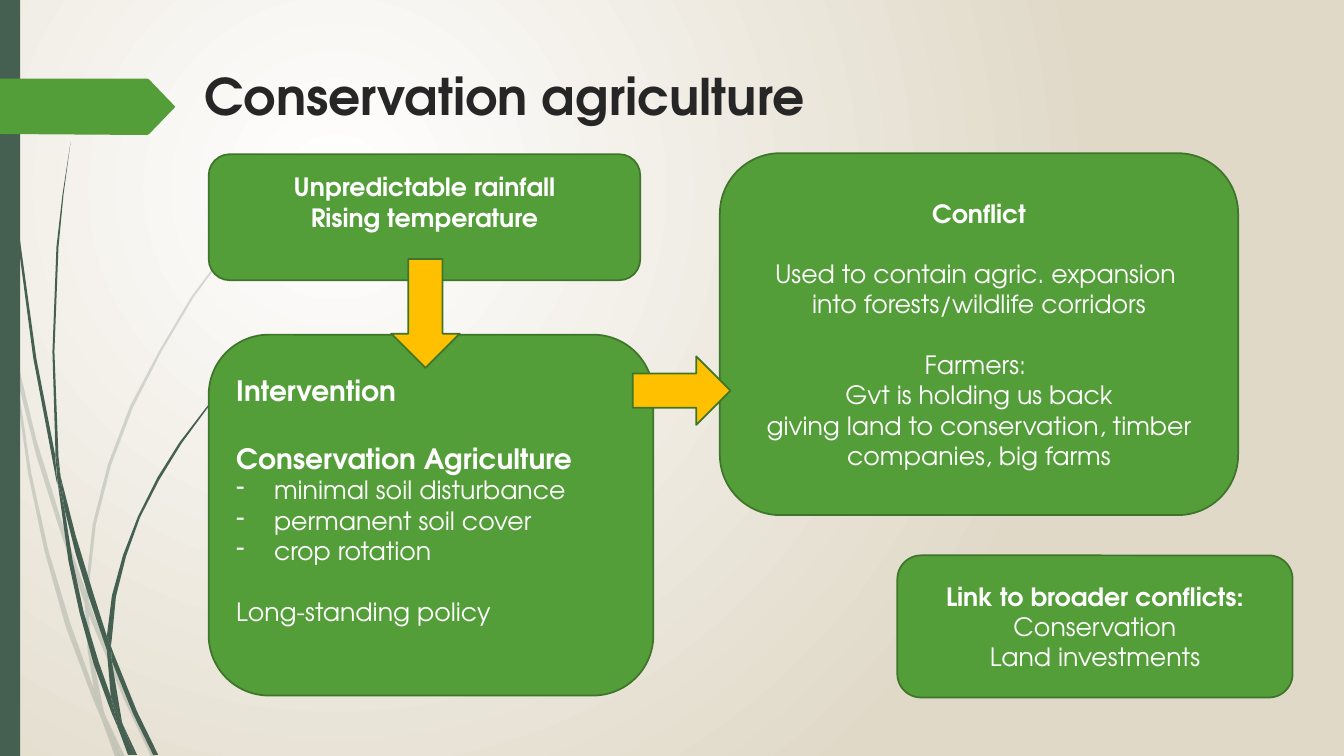
from lxml.etree import SubElement
from pptx import Presentation
from pptx.dml.color import RGBColor
from pptx.enum.shapes import MSO_SHAPE
from pptx.enum.text import MSO_ANCHOR, PP_ALIGN
from pptx.oxml.ns import qn
from pptx.util import Inches, Pt

WIDE, HIGH = Inches(13.33), Inches(7.5)
CELL = HIGH / 75
FONT = "TeX Gyre Adventor"
GREEN = RGBColor(0x54, 0x9E, 0x39)
EDGE = RGBColor(0x3E, 0x75, 0x2A)
PINE = RGBColor(0x45, 0x5F, 0x51)
GOLD = RGBColor(0xFF, 0xC0, 0x00)
WHITE = RGBColor(0xFF, 0xFF, 0xFF)
INK = RGBColor(0x26, 0x26, 0x26)
SAND = RGBColor(0xE0, 0xD9, 0xC8)
GAP = 21.7

PALE = [
    [(1.1, 35), (0.9, 32.2), (0, 28.2), (0, 29.9), (1, 34.4)],
    [(5.8, 52.2), (8.4, 59.9), (8.5, 58.6), (6.2, 52), (3.6, 43.6), (1.4, 34.5), (1.7, 37.6),
     (3.6, 45.2)],
    [(9.2, 60.7), (8.8, 59.6), (8.8, 61), (12.3, 69.4), (15, 75.1), (15.5, 75.1), (12.7, 69.2)],
    [(11.9, 75.1), (12.4, 75.1), (10.5, 71.1)],
    [(9.3, 68.3), (7, 61.9), (4.8, 54.6), (3.1, 46.9), (1.7, 37.6), (1.1, 35), (2.8, 47),
     (4.4, 54.6), (6.5, 62.1), (9.2, 69.3), (10.1, 71.4), (9.9, 70.7)],
    [(8.4, 59.9), (8.7, 64.6), (9.3, 68.3), (9.6, 69.2), (10.5, 71.1), (10.3, 70.6),
     (9.1, 64.6), (8.8, 61), (8.8, 60.8)],
    [(8.8, 58.4), (9.5, 52.1), (11, 46.2), (13.2, 40.4), (16, 34.9), (19.2, 29.5), (22.9, 24.5),
     (26.8, 19.8), (31.2, 15.4), (31.2, 15.3), (26.8, 19.7), (22.8, 24.4), (19, 29.4),
     (15.8, 34.8), (12.9, 40.3), (10.7, 46.1), (9.2, 52), (8.5, 58.4), (8.5, 58.6), (8.8, 59.6)],
    [(10.1, 71.4), (11.4, 75.1), (11.9, 75.1)],
    [(8.8, 60.8), (8.8, 61), (8.8, 59.6), (8.5, 58.6), (8.4, 59.9)],
    [(9.6, 69.2), (9.3, 68.3), (9.9, 70.7), (10.1, 71.4), (11.9, 75.1), (10.5, 71.1)],
]
DARK = [
    [(0.7, 11), (1.7, 23.3), (3.3, 35.5), (5.6, 47.7), (5.7, 48.1), (5.5, 45.7), (5.5, 45.3),
     (3.6, 35.5), (1.9, 23.2), (0.8, 10.9), (0.5, 4.8), (0.4, 0), (0.3, 0), (0.4, 4.8)],
    [(8.8, 59.2), (10.6, 64.5), (10.6, 63.3), (10.6, 63.1), (9.3, 59), (7.5, 53.1), (6, 47.2),
     (6.4, 50.5), (7.5, 54.9)],
    [(11.3, 64.9), (11, 64.1), (11.1, 65.6), (13.2, 70.8), (15.2, 74.9), (15.7, 74.9),
     (13.6, 70.6)],
    [(11, 69.1), (9.8, 65.7), (8.3, 60.7), (7.2, 55.6), (6.4, 50.5), (5.7, 47.7), (6.8, 55.7),
     (7.9, 60.8), (9.3, 65.9), (11.1, 70.8), (11.7, 72.2), (11.6, 71.7)],
    [(6, 47.2), (5.8, 45.3), (5.4, 34.9), (5.8, 24.5), (6.3, 19.3), (7, 14.1), (6.2, 19.3),
     (5.6, 24.5), (5.2, 34.9), (5.5, 44.9)],
    [(13.3, 74.9), (13.6, 74.9), (12.2, 71.9)],
    [(5.7, 47.7), (6.4, 50.5), (6, 47.2), (5.5, 44.9), (5.5, 45.3)],
    [(11.1, 63.3), (11.5, 59.2), (12.5, 55.2), (13.9, 51.3), (15.8, 47.6), (18, 44), (20.5, 40.6),
     (23.1, 37.4), (26.1, 34.4), (26, 34.4), (23.1, 37.3), (20.4, 40.5), (17.8, 43.9),
     (15.6, 47.4), (13.7, 51.2), (12.2, 55.1), (11.1, 59.1), (10.6, 63.1), (11, 64.1)],
    [(11.7, 72.2), (12.7, 74.9), (13.1, 74.9)],
    [(10.6, 64.5), (11, 69.1), (11.6, 70.6), (12.2, 71.9), (12.1, 71.6), (11.1, 65.6),
     (10.9, 65.1)],
    [(10.6, 64.5), (10.9, 65.1), (11.1, 65.6), (11, 64.1), (10.6, 63.1)],
    [(11.6, 70.6), (11, 69.1), (11.6, 71.7), (11.7, 72.2), (13, 74.9), (13.3, 74.9), (12.2, 71.9)],
]
TAG = [(17.4, 10.6), (14.8, 13.3), (14.6, 13.4), (0, 13.3), (0, 7.8), (14.6, 7.8), (14.8, 7.9)]


def paint(shape, fill, line=None):
    """Fill a shape and give it an edge or none."""
    shape.shadow.inherit = False
    shape.fill.solid()
    shape.fill.fore_color.rgb = fill
    if line is None:
        shape.line.fill.background()
    else:
        shape.line.color.rgb = line
        shape.line.width = Pt(1.25)
    return shape


def place(slide, kind, box, fill, line=None):
    """Add a preset shape on the cell grid."""
    sides = [round(side * CELL) for side in box]
    return paint(slide.shapes.add_shape(kind, *sides), fill, line)


def write(frame, text, first=False, size=18, bold=False, color=WHITE,
          align=PP_ALIGN.LEFT, gap=0, dash=False):
    """Write one paragraph with its format."""
    para = frame.paragraphs[0] if first else frame.add_paragraph()
    para.alignment = align
    if gap:
        para.space_before = Pt(gap)
    if dash:
        props = para._p.get_or_add_pPr()
        props.set("marL", str(Pt(27)))
        props.set("indent", str(-Pt(27)))
        SubElement(props, qn("a:buFontTx"))
        SubElement(props, qn("a:buChar")).set("char", "-")
    run = para.add_run()
    run.text = text
    font = run.font
    font.name, font.size, font.bold = FONT, Pt(size), bold
    font.color.rgb = color


def card(slide, box, lines, align=PP_ALIGN.CENTER, foot=0):
    """Draw a green card with its lines, lifted by a foot margin."""
    shape = place(slide, MSO_SHAPE.ROUNDED_RECTANGLE, box, GREEN, EDGE)
    frame = shape.text_frame
    frame.word_wrap = True
    frame.vertical_anchor = MSO_ANCHOR.MIDDLE
    frame.margin_bottom = Inches(0.05) + Pt(foot)
    for rank, (text, form) in enumerate(lines):
        write(frame, text, first=rank == 0, align=align, **form)


def trace(slide, box, knots, fill, alpha=None):
    """Draw a closed outline through knots counted from the box corner."""
    left, top = box[:2]
    rim = [((left + x) * CELL, (top + y) * CELL) for x, y in knots]
    form = slide.shapes.build_freeform(*rim[0], scale=1.0)
    form.add_line_segments(rim[1:], close=True)
    shape = paint(form.convert_to_shape(), fill)
    if alpha:
        tint = shape._element.spPr.find(qn("a:solidFill"))[0]
        SubElement(tint, qn("a:alpha")).set("val", str(alpha * 1000))


def ground(slide):
    """Fill the background with a round gradient."""
    fill = slide.background.fill
    fill.gradient()
    for stop, color, spot in zip(fill.gradient_stops, (WHITE, SAND), (0, 1)):
        stop.color.rgb = color
        stop.position = spot
    grad = slide.background._cSld.find(".//" + qn("a:gradFill"))
    grad.remove(grad.find(qn("a:lin")))
    ring = SubElement(grad, qn("a:path"))
    ring.set("path", "circle")
    rect = SubElement(ring, qn("a:fillToRect"))
    for side, share in zip("ltrb", (50, 50, 100, 100)):
        rect.set(side, str(share * 1000))


def border(slide, box):
    """Draw the grass, the side bar and the tag."""
    for blades, alpha in ((PALE, 20), (DARK, None)):
        for knots in blades:
            trace(slide, box, knots, PINE, alpha)
    place(slide, MSO_SHAPE.RECTANGLE, box, PINE)
    trace(slide, box, TAG, GREEN)


def head(slide, box):
    """Place and write the title."""
    title = slide.shapes.title
    title.left, title.top, title.width, title.height = (round(s * CELL) for s in box)
    title.text_frame.vertical_anchor = MSO_ANCHOR.TOP
    write(title.text_frame, "Conservation agriculture", first=True,
          size=36, bold=True, color=INK)


def flow(slide, box):
    """Draw the cards and the arrows between them."""
    left, top = box[:2]
    bold = {"bold": True}
    large = {"bold": True, "size": 20}
    card(slide, (left, top, 42.8, 12.5), [
        ("Unpredictable rainfall", bold), ("Rising temperature", bold)], foot=GAP)
    card(slide, (left, top + 17.9, 44.1, 35.8), [
        ("Intervention", large),
        ("Conservation Agriculture", {**large, "gap": 24.2}),
        ("minimal soil disturbance", {"dash": True}),
        ("permanent soil cover", {"dash": True}),
        ("crop rotation", {"dash": True}),
        ("Long-standing policy", {"gap": GAP})], align=PP_ALIGN.LEFT, foot=GAP)
    card(slide, (left + 50.7, top - 0.1, 51.4, 35.9), [
        ("Conflict", bold),
        ("Used to contain agric. expansion ", {"gap": GAP}),
        ("into forests/wildlife corridors", {}),
        ("Farmers: ", {"gap": GAP}),
        ("Gvt is holding us back", {}),
        ("giving land to conservation, timber companies, big farms", {})])
    place(slide, MSO_SHAPE.DOWN_ARROW, (left + 18.1, top + 10.4, 6.8, 10.8), GOLD, EDGE)
    side = place(slide, MSO_SHAPE.DOWN_ARROW, (left + 43.5, top + 18.6, 6.8, 9.7), GOLD, EDGE)
    side.rotation = 270
    card(slide, (left + 68.3, top + 39.8, 39.2, 14.1), [
        ("Link to broader conflicts:", bold),
        ("Conservation", {}), ("Land investments", {})])


def main():
    """Build and save the slide."""
    deck = Presentation()
    deck.slide_width, deck.slide_height = WIDE, HIGH
    slide = deck.slides.add_slide(deck.slide_layouts[5])
    ground(slide)
    border(slide, (0, 0, 2, 75))
    head(slide, (19.3, 6, 97.5, 8.7))
    flow(slide, (20.7, 15.3, 107.5, 53.9))
    deck.save("out.pptx")


if __name__ == "__main__":
    main()
